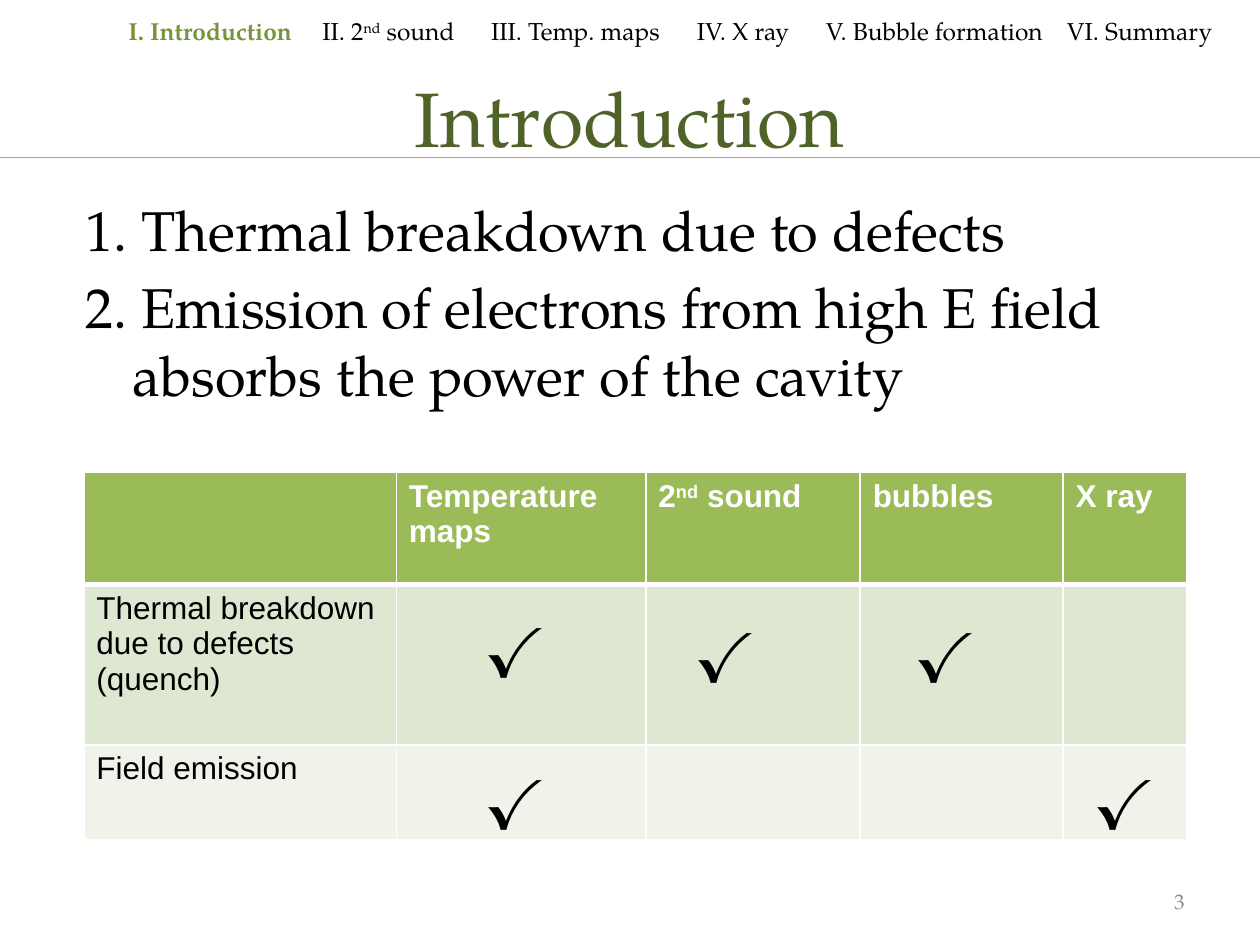
import pptx
import pptx.dml.color
import pptx.enum.shapes
import pptx.enum.text
import pptx.oxml
import pptx.oxml.ns
import pptx.util
from pptx.util import Cm

SERIF = "TeX Gyre Pagella"
SANS = "Arial"
ALIGN = pptx.enum.text.PP_ALIGN
ANCHOR = pptx.enum.text.MSO_ANCHOR

SECTIONS = ["I. Introduction", "II. 2^nd^ sound", "III. Temp. maps", "IV. X ray",
            "V. Bubble formation", "VI. Summary"]
SECTION_TABS = [3.91, 7.31, 11.46, 14.06, 18.92]
POINTS = ["1. Thermal breakdown due to defects",
          "2. Emission of electrons from high E field absorbs the power of the cavity"]
TABLE_ROWS = [["", "Temperature maps", "2^nd^ sound", "bubbles", "X ray"],
              ["Thermal breakdown due to defects (quench)", "", "", "", ""],
              ["Field emission", "", "", "", ""]]
COLUMN_WIDTHS = [6.3, 5.03, 4.32, 4.09, 2.49]
ROW_HEIGHTS = [2.26, 3.23, 1.91]
ROW_FILLS = ["9BBB59", "DEE7D1", "EFF3EA"]
# Left, top and height of each check mark, from the corner of the table
CHECK_MARKS = [(7.62, 3.17, 1.47), (11.86, 3.17, 1.69), (16.3, 3.17, 1.69),
               (7.62, 6.13, 1.69), (19.9, 6.13, 1.69)]


def color(value):
    return pptx.dml.color.RGBColor.from_string(value)


def add_runs(paragraph, text, name, size, hex_color, bold=False):
    """Add text in which parts between ^ signs are superscript."""
    for index, part in enumerate(text.split("^")):
        if not part:
            continue
        run = paragraph.add_run()
        run.text = part
        formats = {"name": name, "size": pptx.util.Pt(size), "bold": bold}
        for attribute, value in formats.items():
            setattr(run.font, attribute, value)
        run.font.color.rgb = color(hex_color)
        if index % 2:
            run.font._element.set("baseline", "30000")


def add_text_frame(slide, box, anchor=ANCHOR.TOP):
    frame = slide.shapes.add_textbox(*map(Cm, box)).text_frame
    frame.word_wrap = True
    frame.vertical_anchor = anchor
    return frame


def add_line_of_text(slide, box, text, size, hex_color, alignment):
    frame = add_text_frame(slide, box, ANCHOR.MIDDLE)
    paragraph = frame.paragraphs[0]
    paragraph.alignment = alignment
    add_runs(paragraph, text, SERIF, size, hex_color)
    return frame


def add_navigation(slide, box):
    paragraph = add_text_frame(slide, box).paragraphs[0]
    tabs = pptx.oxml.parse_xml(f"<a:tabLst {pptx.oxml.ns.nsdecls('a')}/>")
    for position in SECTION_TABS:
        tab = tabs.makeelement(pptx.oxml.ns.qn("a:tab"),
                               {"pos": str(Cm(position)), "algn": "l"})
        tabs.append(tab)
    paragraph._p.get_or_add_pPr().append(tabs)
    add_runs(paragraph, SECTIONS[0], SERIF, 14, "77933C", bold=True)
    for section in SECTIONS[1:]:
        add_runs(paragraph, "\t" + section, SERIF, 14, "000000")


def add_title(slide, box):
    left, top, width, height = box
    rule_top = top + 2.41
    rule = slide.shapes.add_connector(
        pptx.enum.shapes.MSO_CONNECTOR.STRAIGHT,
        Cm(0), Cm(rule_top), Cm(25.4), Cm(rule_top))
    rule.line.color.rgb = color("98B955")
    rule.line.width = pptx.util.Pt(0.75)
    effects = pptx.oxml.parse_xml(f"<a:effectLst {pptx.oxml.ns.nsdecls('a')}/>")
    rule._element.spPr.append(effects)
    add_line_of_text(slide, box, "Introduction", 44, "4F6228", ALIGN.CENTER)


def add_points(slide, box):
    frame = add_text_frame(slide, box)
    for index, point in enumerate(POINTS):
        paragraph = frame.add_paragraph() if index else frame.paragraphs[0]
        properties = paragraph._p.get_or_add_pPr()
        properties.set("marL", str(Cm(0.95)))
        properties.set("indent", str(Cm(-0.95)))
        if index:
            paragraph.space_before = pptx.util.Pt(6)
        add_runs(paragraph, point, SERIF, 32, "000000")


def set_borders(cell, widths):
    """Draw white borders, with the width in points for each side."""
    properties = cell._tc.get_or_add_tcPr()
    for side, width in widths.items():
        properties.append(pptx.oxml.parse_xml(
            f'<a:ln{side} {pptx.oxml.ns.nsdecls("a")} w="{pptx.util.Pt(width)}">'
            f'<a:solidFill><a:srgbClr val="FFFFFF"/></a:solidFill></a:ln{side}>'))


def add_methods_table(slide, box):
    left, top, width, height = box
    table = slide.shapes.add_table(len(TABLE_ROWS), len(COLUMN_WIDTHS),
                                   *map(Cm, box)).table
    for column, column_width in zip(table.columns, COLUMN_WIDTHS):
        column.width = Cm(column_width)
    for row_index, texts in enumerate(TABLE_ROWS):
        header = row_index == 0
        table.rows[row_index].height = Cm(ROW_HEIGHTS[row_index])
        for column_index, text in enumerate(texts):
            cell = table.cell(row_index, column_index)
            set_borders(cell, {"L": 1, "R": 1, "T": 3 if row_index == 1 else 1,
                               "B": 3 if header else 1})
            cell.fill.solid()
            cell.fill.fore_color.rgb = color(ROW_FILLS[row_index])
            add_runs(cell.text_frame.paragraphs[0], text, SANS, 18,
                     "FFFFFF" if header else "000000", bold=header)
    for mark_left, mark_top, mark_height in CHECK_MARKS:
        mark_box = (left + mark_left, top + mark_top, 2.54, mark_height)
        frame = add_line_of_text(slide, mark_box, "✓ ", 44, "000000", ALIGN.CENTER)
        frame.margin_bottom = Cm(0.89)


def main():
    presentation = pptx.Presentation()
    presentation.slide_width = Cm(25.4)
    presentation.slide_height = Cm(19.05)
    slide = presentation.slides.add_slide(presentation.slide_layouts[6])
    add_title(slide, (1.27, 0.76, 22.86, 3.18))
    add_points(slide, (1.47, 3.81, 22.86, 13.77))
    add_navigation(slide, (2.34, 0.2, 23.06, 0.86))
    add_methods_table(slide, (1.69, 9.53, 22.23, 7.4))
    add_line_of_text(slide, (18.21, 17.65, 5.92, 1.02), "3", 12, "8C8C8C", ALIGN.RIGHT)
    presentation.save("out.pptx")


if __name__ == "__main__":
    main()
